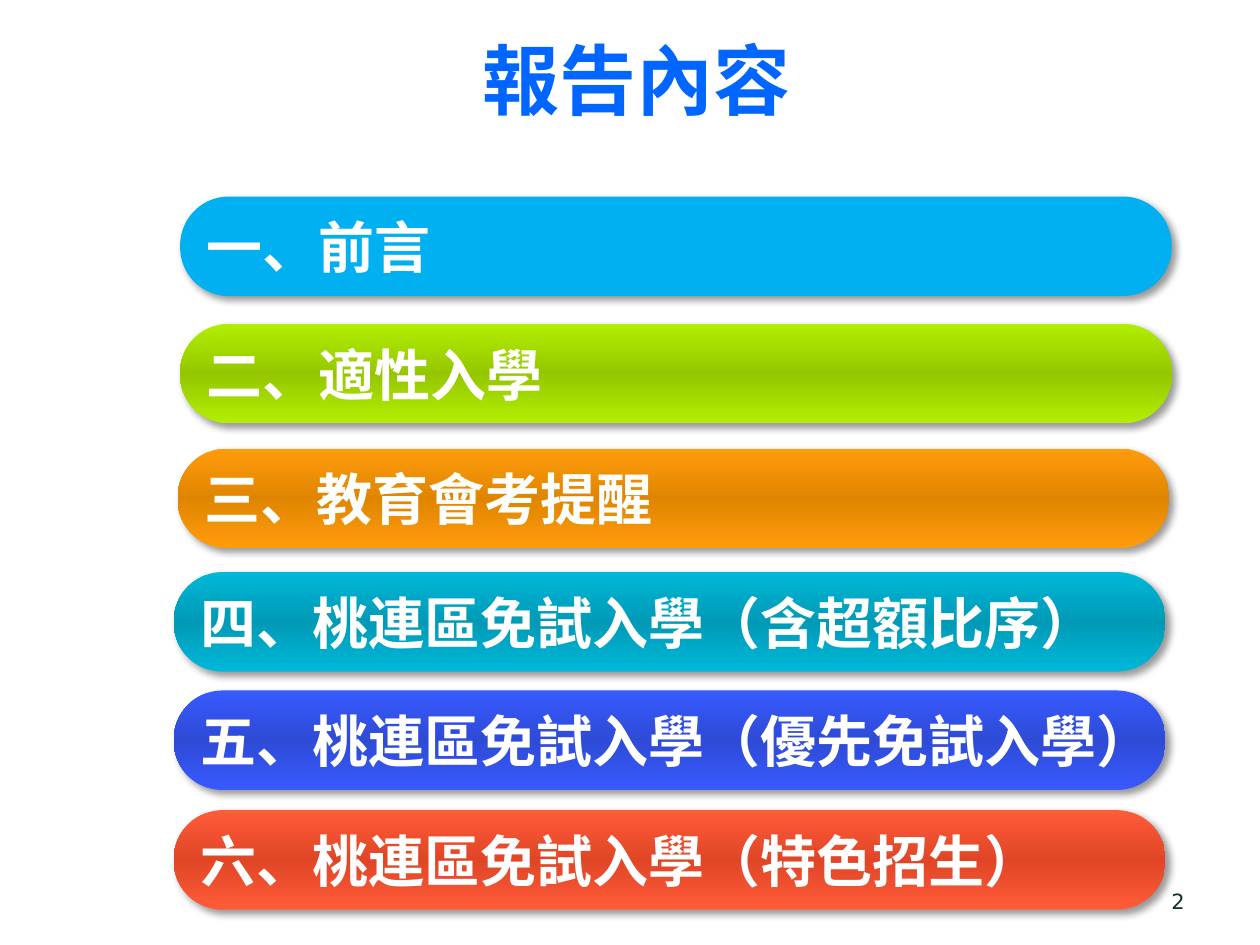
from dataclasses import dataclass

from lxml import etree
from pptx import Presentation
from pptx.dml.color import RGBColor
from pptx.enum.shapes import MSO_SHAPE
from pptx.enum.text import MSO_ANCHOR, PP_ALIGN
from pptx.oxml import parse_xml
from pptx.oxml.ns import nsdecls, qn
from pptx.util import Inches, Pt

ROUNDED = MSO_SHAPE.ROUNDED_RECTANGLE
MIDDLE = MSO_ANCHOR.MIDDLE
LEFT, CENTER, RIGHT = PP_ALIGN.LEFT, PP_ALIGN.CENTER, PP_ALIGN.RIGHT


@dataclass(frozen=True)
class Theme:
    title_color: str = "0066FF"
    bar_text: str = "FFFFFF"
    number_color: str = "0C3226"
    title_size: int = 44
    bar_size: int = 32
    number_size: int = 12
    heading_font: str = "Noto Sans CJK SC"
    number_font: str = "DejaVu Sans"


THEME = Theme()
BAR_WIDTH, BAR_HEIGHT = 7.87, 0.79

# left, top, edge colour, middle colour, text
BARS = [
    (1.43, 1.56, "00B0F0", None, "一、前言"),
    (1.43, 2.57, "B2EE00", "95C700", "二、適性入學"),
    (1.41, 3.56, "FF9C0C", "E08500", "三、教育會考提醒"),
    (1.38, 4.54, "00B8D9", "009AB6", "四、桃連區免試入學（含超額比序）"),
    (1.38, 5.48, "375AFF", "2E4BD6", "五、桃連區免試入學（優先免試入學）"),
    (1.38, 6.43, "FF5B39", "E04626", "六、桃連區免試入學（特色招生）"),
]

SHADOW = f"""<a:outerShdw {nsdecls('a')} blurRad="{Pt(4)}" dist="{Pt(3)}"
    dir="2700000" algn="tl" rotWithShape="0">
  <a:srgbClr val="000000"><a:alpha val="40000"/></a:srgbClr></a:outerShdw>"""
TITLE_OUTLINE = f"""<a:ln {nsdecls('a')} w="{Pt(1.5)}">
  <a:solidFill><a:srgbClr val="FFFFFF"/></a:solidFill></a:ln>"""


def write_text(shape, text, alignment, color, wrap=True, **font_format):
    """Put one formatted line in the shape and return its run."""
    frame = shape.text_frame
    frame.word_wrap = wrap
    frame.vertical_anchor = MIDDLE
    paragraph = frame.paragraphs[0]
    paragraph.alignment = alignment
    run = paragraph.add_run()
    run.text = text
    for name, value in font_format.items():
        setattr(run.font, name, value)
    run.font.color.rgb = RGBColor.from_string(color)
    east_asian = etree.SubElement(run.font._element, qn("a:ea"))
    east_asian.set("typeface", font_format["name"])
    return run


def fill_bar(shape, edge, middle):
    """Fill with one colour, or top to bottom from edge to middle and back."""
    if middle is None:
        shape.fill.solid()
        shape.fill.fore_color.rgb = RGBColor.from_string(edge)
        return
    shape.fill.gradient()
    shape.fill.gradient_angle = 270
    for stop, position in zip(shape.fill.gradient_stops, (0, 1)):
        stop.color.rgb = RGBColor.from_string(edge)
        stop.position = position
    stop_list = shape._element.spPr.find(".//" + qn("a:gsLst"))
    stop_list.insert(1, parse_xml(
        f'<a:gs {nsdecls("a")} pos="50000"><a:srgbClr val="{middle}"/></a:gs>'))


presentation = Presentation()
presentation.slide_width = Inches(10)
presentation.slide_height = Inches(7.5)
slide = presentation.slides.add_slide(presentation.slide_layouts[6])

number = slide.shapes.add_textbox(Inches(7.17), Inches(6.95), Inches(2.33), Inches(0.4))
write_text(number, "2", RIGHT, THEME.number_color,
           name=THEME.number_font, size=Pt(THEME.number_size))

title = slide.shapes.add_textbox(Inches(0.55), Inches(0), Inches(9), Inches(1.25))
title_run = write_text(title, "報告內容", CENTER, THEME.title_color,
                       name=THEME.heading_font, size=Pt(THEME.title_size), bold=True)
title_run.font._element.insert(0, parse_xml(TITLE_OUTLINE))

for left, top, edge, middle, text in BARS:
    bar = slide.shapes.add_shape(ROUNDED, Inches(left), Inches(top),
                                 Inches(BAR_WIDTH), Inches(BAR_HEIGHT))
    bar.adjustments[0] = 0.49
    fill_bar(bar, edge, middle)
    bar.line.fill.background()
    bar.shadow.inherit = False
    bar._element.spPr.find(qn("a:effectLst")).append(parse_xml(SHADOW))
    write_text(bar, text, LEFT, THEME.bar_text, wrap=False,
               name=THEME.heading_font, size=Pt(THEME.bar_size), bold=True)

presentation.save("out.pptx")
